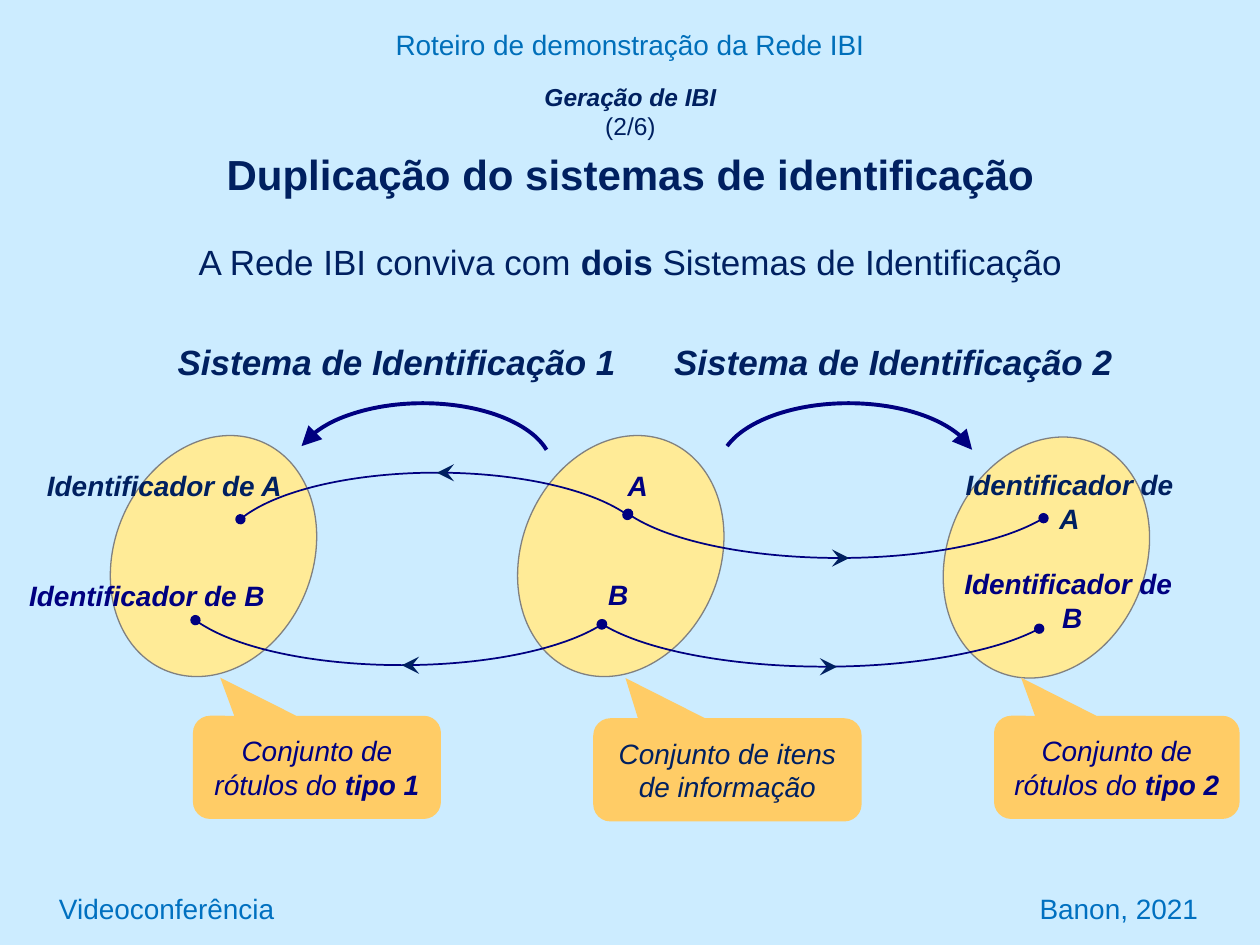
from dataclasses import dataclass

import lxml.etree
import pptx
import pptx.dml.color
import pptx.enum.shapes
import pptx.enum.text
import pptx.oxml.ns
import pptx.util

Cm = pptx.util.Cm
Pt = pptx.util.Pt
Kind = pptx.enum.shapes.MSO_SHAPE
Align = pptx.enum.text.PP_ALIGN
Anchor = pptx.enum.text.MSO_ANCHOR
qn = pptx.oxml.ns.qn

NAVY, INK, BLUE = "000080", "002060", "0070C0"


@dataclass
class Box:
    x: float
    y: float
    w: float
    h: float

    def cm(self) -> list:
        return [Cm(v) for v in (self.x, self.y, self.w, self.h)]


@dataclass
class Label:
    box: Box
    text: str
    size: int = 16
    tint: str = INK
    bold: bool = False
    slant: bool = False
    wrap: bool = True
    align: Align = Align.CENTER


@dataclass
class Call:
    box: Box
    text: str
    tint: str
    tip: tuple


@dataclass
class Link:
    box: Box
    flip: bool
    step: float


def hue(code: str):
    return pptx.dml.color.RGBColor.from_string(code)


def fill(shape, code: str) -> None:
    shape.fill.solid()
    shape.fill.fore_color.rgb = hue(code)


def stroke(shape, code: str, width: float) -> None:
    shape.line.color.rgb = hue(code)
    shape.line.width = Pt(width)


def tip(shape, end: str, kind: str, size: str) -> None:
    line = shape.line._get_or_add_ln()
    lxml.etree.SubElement(line, qn(f"a:{end}"), type=kind, w=size, len=size)


def write(frame, item: Label) -> None:
    frame.text = item.text
    frame.word_wrap = item.wrap
    for para in frame.paragraphs:
        para.alignment = item.align
        first, *rest = para.text.split("*")
        para.text = first
        for part in rest:
            para.add_run().text = part
        for i, run in enumerate(para.runs):
            font = run.font
            font.name, font.size = "Arial", Pt(item.size)
            font.bold, font.italic = item.bold or i % 2 == 1, item.slant
            font.color.rgb = hue(item.tint)


def label(slide, item: Label):
    frame = slide.shapes.add_textbox(*item.box.cm()).text_frame
    write(frame, item)
    return frame


def form(slide, kind, box: Box):
    shape = slide.shapes.add_shape(kind, *box.cm())
    shape.shadow.inherit = False
    return shape


def oval(slide, x: float, y: float) -> None:
    shape = form(slide, Kind.OVAL, Box(x, y, 3.99, 5))
    shape.rotation = 23
    fill(shape, "FFEB97")
    stroke(shape, "808080", 0.75)


def call(slide, item: Call) -> None:
    shape = form(slide, Kind.ROUNDED_RECTANGULAR_CALLOUT, item.box)
    shape.adjustments[0], shape.adjustments[1] = item.tip
    fill(shape, "FFCC66")
    shape.line.fill.background()
    write(shape.text_frame, Label(item.box, item.text, tint=item.tint, slant=True))
    shape.text_frame.vertical_anchor = Anchor.MIDDLE


def arc(slide, box: Box, start: float, stop: float, width: float):
    shape = form(slide, Kind.ARC, box)
    shape.adjustments[0], shape.adjustments[1] = start, stop
    shape.fill.background()
    stroke(shape, NAVY, width)
    return shape


def link(slide, item: Link) -> None:
    box = item.box
    curve = arc(slide, box, 113.27, 209.83, 1)
    if item.flip:
        curve._element.spPr.find(qn("a:xfrm")).set("flipV", "1")
    for end in ("headEnd", "tailEnd"):
        tip(curve, end, "oval", "med")
    x = box.x + box.w / 2
    y = box.y + box.h if item.flip else box.y
    near, far = (x, x + item.step) if item.step > 0 else (x - item.step, x)
    straight = pptx.enum.shapes.MSO_CONNECTOR.STRAIGHT
    mark = slide.shapes.add_connector(straight, Cm(near), Cm(y), Cm(far), Cm(y))
    stroke(mark, INK, 0.75)
    tip(mark, "tailEnd", "stealth", "lg")
    lxml.etree.SubElement(mark._element.spPr, qn("a:effectLst"))


def name(x: float, y: float, w: float, text: str, tint: str = NAVY,
         wrap: bool = False, h: float = 0.94, size: int = 16) -> Label:
    return Label(Box(x, y, w, h), text, size, tint, True, True, wrap)


OVALS = [(2.31, 8.71), (10.52, 8.71), (19.1, 8.74)]
CALLS = [
    Call(Box(3.89, 14.43, 5, 2.08), "Conjunto de rótulos do *tipo 1", NAVY, (-0.39, -0.87)),
    Call(Box(11.96, 14.48, 5.41, 2.08), "Conjunto de itens de informação", INK, (-0.38, -0.89)),
    Call(Box(20.04, 14.43, 4.95, 2.08), "Conjunto de rótulos do *tipo 2", NAVY, (-0.39, -0.87)),
]
LINKS = [
    Link(Box(4.5, 9.53, 8.61, 3.1), False, -0.2),
    Link(Box(3.53, 10.31, 9.14, 3.1), True, -0.2),
    Link(Box(12.22, 8.15, 9.4, 3.1), True, 0.2),
    Link(Box(11.61, 10.34, 10.03, 3.1), True, 0.25),
]
BOWS = [(5.92, "headEnd"), (14.5, "tailEnd")]
LABELS = [
    Label(Box(0, 0.43, 25.4, 0.94), "Roteiro de demonstração da Rede IBI", tint="006FBA"),
    Label(Box(0.71, 4.72, 24, 1.12),
          "A Rede IBI conviva com *dois* Sistemas de Identificação", 20),
    name(3.3, 6.73, 9.4, "Sistema de Identificação 1", INK, h=1.12, size=20),
    name(13.31, 6.73, 9.4, "Sistema de Identificação 2", INK, h=1.12, size=20),
    name(12.4, 9.32, 0.91, "A"),
    name(12.01, 11.51, 0.91, "B"),
    name(19.02, 9.3, 5.08, "Identificador de A", INK, True, 1.63),
    name(19.15, 11.3, 4.93, "Identificador de \nB", h=1.63),
    name(0.66, 9.32, 5.31, "Identificador de A", INK),
    name(0.3, 11.53, 5.33, "Identificador de B"),
]
FOOT = [
    Label(Box(0.94, 17.78, 10, 1.07), "Videoconferência", tint=BLUE, align=Align.LEFT),
    Label(Box(14.4, 17.78, 10, 1.07), "Banon, 2021", tint=BLUE, align=Align.RIGHT),
]
HEAD = Label(Box(1.9, 1.52, 21.62, 2.49),
             "Geração de IBI\n(2/6)\nDuplicação do sistemas de identificação", 14, bold=True)


def main() -> None:
    deck = pptx.Presentation()
    deck.slide_width, deck.slide_height = Cm(25.4), Cm(19.05)
    slide = deck.slides.add_slide(deck.slide_layouts[6])
    fill(slide.background, "CCECFF")
    top, page, title = label(slide, HEAD).paragraphs
    top.runs[0].font.italic = True
    page.runs[0].font.bold = False
    title.runs[0].font.size = Pt(24)
    title.space_before = Pt(4.8)
    for x, y in OVALS:
        oval(slide, x, y)
    for item in CALLS:
        call(slide, item)
    for item in LINKS:
        link(slide, item)
    for x, end in BOWS:
        tip(arc(slide, Box(x, 8.13, 5.21, 2.64), 114.33, 210.79, 2.25), end, "triangle", "lg")
    for item in LABELS:
        label(slide, item)
    for item in FOOT:
        label(slide, item).vertical_anchor = Anchor.MIDDLE
    deck.save("out.pptx")


if __name__ == "__main__":
    main()
